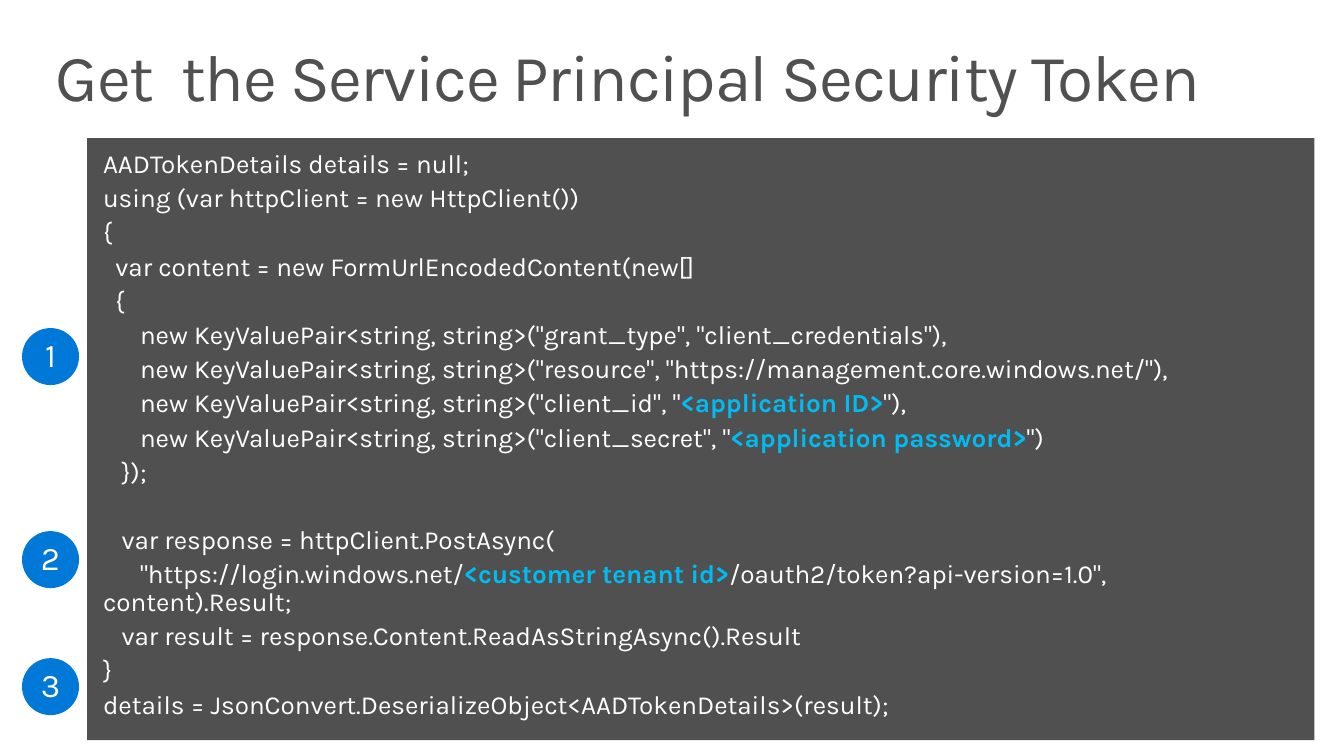
import pptx
import pptx.util
import pptx.dml.color
import pptx.enum.shapes
import pptx.enum.text
import pptx.oxml.ns
from lxml import etree

RGB = pptx.dml.color.RGBColor
GREY = RGB(0x50, 0x50, 0x50)
WHITE = RGB(0xFF, 0xFF, 0xFF)
BLUE = RGB(0x00, 0x78, 0xD7)
CYAN = RGB(0x00, 0xBC, 0xF2)
FONT = "Karla"
SCALE = 914400 / 98.8  # EMU per px
GAP = 4.4  # points between code lines
SKIP = 28.8  # points where the code skips a line

# Bars enclose the highlighted parts
CODE = [
    [
        'AADTokenDetails details = null;',
        'using (var httpClient = new HttpClient())',
        '{',
        '  var content = new FormUrlEncodedContent(new[]',
        '  {',
        '      new KeyValuePair<string, string>("grant_type", "client_credentials"),',
        '      new KeyValuePair<string, string>("resource", "https://management.core.windows.net/"),',
        '      new KeyValuePair<string, string>("client_id", "|<application ID>|"),',
        '      new KeyValuePair<string, string>("client_secret", "|<application password>|")',
        '   });',
    ],
    [
        '   var response = httpClient.PostAsync(',
        '      "https://login.windows.net/|<customer tenant id>|/oauth2/token?api-version=1.0", content).Result;',
        '   var result = response.Content.ReadAsStringAsync().Result',
        '}',
        'details = JsonConvert.DeserializeObject<AADTokenDetails>(result);',
    ],
]
STEPS = {"1": 328, "2": 531, "3": 658}  # label: top


def px(num):
    return pptx.util.Emu(round(num * SCALE))


def place(shape, left, top, width, height):
    shape.left, shape.top = px(left), px(top)
    shape.width, shape.height = px(width), px(height)


def setup(shape, side, edge, anchor):
    frame = shape.text_frame
    frame.margin_left = frame.margin_right = px(side)
    frame.margin_top = frame.margin_bottom = px(edge)
    frame.vertical_anchor = anchor
    frame.word_wrap = True
    frame.auto_size = pptx.enum.text.MSO_AUTO_SIZE.NONE
    return frame


def style(para, size, color, align):
    para.line_spacing = 0.9
    para.alignment = align
    para.font.name = FONT
    para.font.size = pptx.util.Pt(size)
    para.font.color.rgb = color


def add_title(slide, text):
    title = slide.shapes.title
    place(title, 40, 32, 1265, 99)
    frame = setup(title, 16, 13, pptx.enum.text.MSO_ANCHOR.TOP)
    frame.text = text
    para = frame.paragraphs[0]
    style(para, 48, GREY, pptx.enum.text.PP_ALIGN.LEFT)
    # Tighter letter spacing
    para._p.pPr.find(pptx.oxml.ns.qn("a:defRPr")).set("spc", "-100")


def add_line(para, text, before):
    for num, part in enumerate(text.split("|")):
        run = para.add_run()
        run.text = part
        if num % 2:
            run.font.bold = True
            run.font.color.rgb = CYAN
    # No bullet or indent
    props = para._p.get_or_add_pPr()
    props.set("marL", "0")
    props.set("indent", "0")
    etree.SubElement(props, pptx.oxml.ns.qn("a:buNone"))
    para.space_before = pptx.util.Pt(before)
    style(para, 19, WHITE, pptx.enum.text.PP_ALIGN.LEFT)


def add_code(slide, blocks):
    body = slide.placeholders[1]
    place(body, 87, 138, 1227, 602)
    body.fill.solid()
    body.fill.fore_color.rgb = GREY
    frame = setup(body, 16, 13, pptx.enum.text.MSO_ANCHOR.TOP)
    para = frame.paragraphs[0]
    before = 0
    for block in blocks:
        for text in block:
            add_line(para or frame.add_paragraph(), text, before)
            para = None
            before = GAP
        before = SKIP


def add_step(slide, label, top):
    dot = slide.shapes.add_shape(
        pptx.enum.shapes.MSO_SHAPE.OVAL, px(22), px(top), px(57), px(57))
    dot.shadow.inherit = False
    dot.fill.solid()
    dot.fill.fore_color.rgb = BLUE
    dot.line.fill.background()
    frame = setup(dot, 0, 0, pptx.enum.text.MSO_ANCHOR.MIDDLE)
    frame.text = label
    style(frame.paragraphs[0], 24, WHITE, pptx.enum.text.PP_ALIGN.CENTER)


def main():
    deck = pptx.Presentation()
    deck.slide_width = pptx.util.Inches(13.6)
    deck.slide_height = pptx.util.Inches(7.65)
    slide = deck.slides.add_slide(deck.slide_layouts[1])
    add_title(slide, "Get  the Service Principal Security Token")
    add_code(slide, CODE)
    for label, top in STEPS.items():
        add_step(slide, label, top)
    deck.save("out.pptx")


if __name__ == "__main__":
    main()
